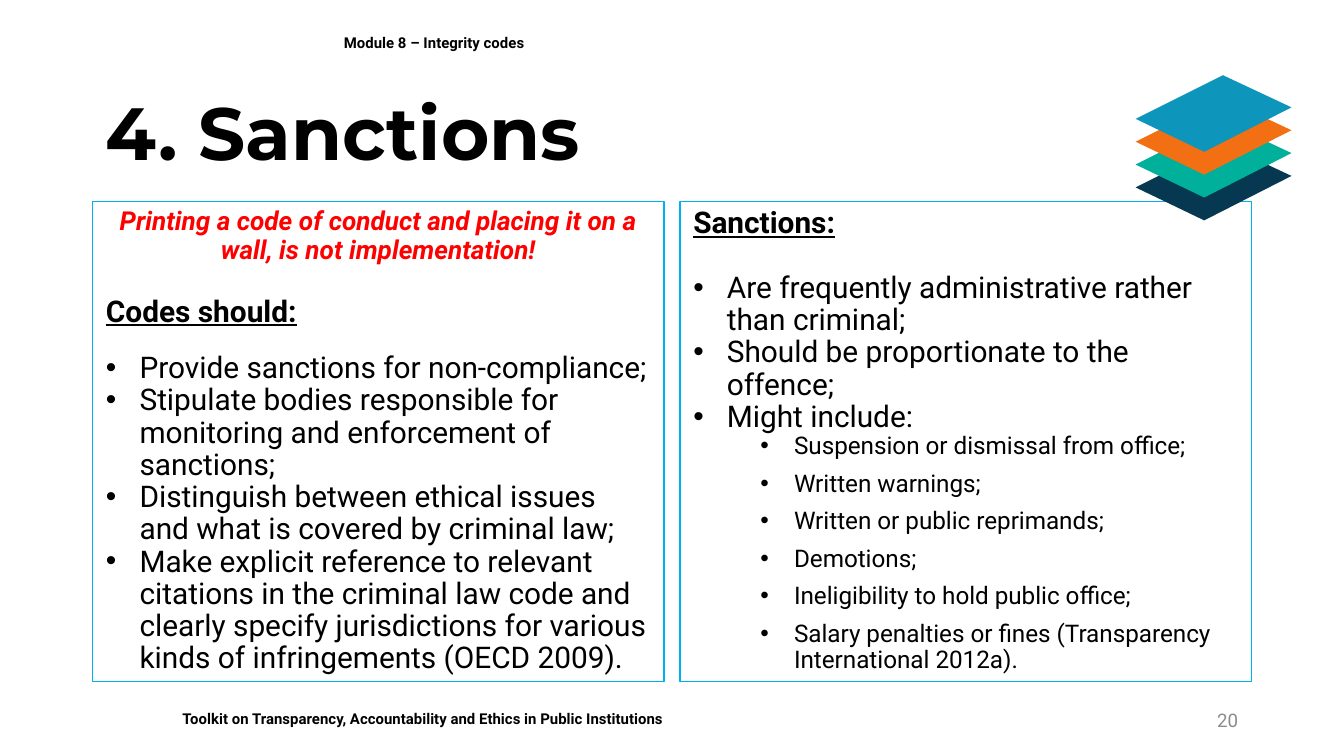
import pptx
import pptx.util
import pptx.dml.color
import pptx.enum.text
import pptx.enum.shapes
import pptx.oxml.ns
from lxml import etree

Inches = pptx.util.Inches
Pt = pptx.util.Pt
ALIGN = pptx.enum.text.PP_ALIGN
ANCHOR = pptx.enum.text.MSO_ANCHOR

CODES = [
    "Provide sanctions for non-compliance;",
    "Stipulate bodies responsible for monitoring and enforcement of sanctions;",
    "Distinguish between ethical issues and what is covered by criminal law;",
    "Make explicit reference to relevant citations in the criminal law code and "
    "clearly specify jurisdictions for various kinds of infringements (OECD 2009).",
]
SANCTIONS = [
    "Are frequently administrative rather than criminal;",
    "Should be proportionate to the offence;",
    "Might include:",
]
PENALTIES = [
    "Suspension or dismissal from office;",
    "Written warnings;",
    "Written or public reprimands;",
    "Demotions;",
    "Ineligibility to hold public office;",
    "Salary penalties or fines (Transparency International 2012a).",
]
LAYERS = ["063951", "00B09B", "F36F13", "0D95BC"]


def color(value):
    return pptx.dml.color.RGBColor.from_string(value)


def add_para(frame, text, size, font="Roboto", fill="000000", bold=False, italic=False,
             underline=False, align=ALIGN.LEFT, spacing=0.9, before=0):
    para = frame.paragraphs[0]
    if para.runs:
        para = frame.add_paragraph()
    para.alignment = align
    para.line_spacing = spacing
    para.space_before = Pt(before)
    span = para.add_run()
    span.text = text
    span.font.name = font
    span.font.size = Pt(size)
    span.font.bold = bold
    span.font.italic = italic
    span.font.underline = underline
    span.font.color.rgb = color(fill)
    return para


def add_bullets(frame, items, size, level=0, first_gap=0, gap=0):
    for index, item in enumerate(items):
        para = add_para(frame, item, size, before=gap if index else first_gap)
        para.level = level
        properties = para._p.get_or_add_pPr()
        properties.set("marL", str(Inches(0.25 + 0.5 * level)))
        properties.set("indent", str(Inches(-0.25)))
        font = etree.SubElement(properties, pptx.oxml.ns.qn("a:buFont"))
        font.set("typeface", "Arial")
        bullet = etree.SubElement(properties, pptx.oxml.ns.qn("a:buChar"))
        bullet.set("char", "•")


def add_text(page, left, top, width, height, text, size, anchor=ANCHOR.MIDDLE, **style):
    box = page.shapes.add_textbox(Inches(left), Inches(top), Inches(width), Inches(height))
    frame = box.text_frame
    frame.word_wrap = True
    frame.vertical_anchor = anchor
    add_para(frame, text, size, **style)


def add_panel(page, left, top, width, height):
    panel = page.shapes.add_shape(pptx.enum.shapes.MSO_SHAPE.RECTANGLE, Inches(left),
                                  Inches(top), Inches(width), Inches(height))
    panel.shadow.inherit = False
    panel.fill.background()
    panel.line.color.rgb = color("00B0F0")
    panel.line.width = Pt(0.75)
    panel.text_frame.word_wrap = True
    panel.text_frame.vertical_anchor = ANCHOR.TOP
    return panel.text_frame


def add_codes(page, *area):
    frame = add_panel(page, *area)
    add_para(frame, "Printing a code of conduct and placing it on a wall, is not implementation!",
             14, fill="FF0000", bold=True, italic=True, align=ALIGN.CENTER)
    add_para(frame, "Codes should:", 16, bold=True, underline=True, before=17)
    add_bullets(frame, CODES, 16, first_gap=13)


def add_sanctions(page, *area):
    frame = add_panel(page, *area)
    add_para(frame, "Sanctions:", 16, bold=True, underline=True)
    add_bullets(frame, SANCTIONS, 16, first_gap=17.3)
    add_bullets(frame, PENALTIES, 13, level=1, gap=6)


def add_layers(page, left, top, width, height, step):
    corners = [(0.56, 0), (1, 0.42), (0.44, 1), (0, 0.57)]
    for index, fill in enumerate(LAYERS):
        layer_top = top + step * (len(LAYERS) - 1 - index)
        points = [(Inches(left + x * width), Inches(layer_top + y * height)) for x, y in corners]
        builder = page.shapes.build_freeform(*points[0])
        builder.add_line_segments(points[1:], close=True)
        layer = builder.convert_to_shape()
        layer.shadow.inherit = False
        layer.fill.solid()
        layer.fill.fore_color.rgb = color(fill)
        layer.line.fill.background()


def main():
    deck = pptx.Presentation()
    deck.slide_width = Inches(10)
    deck.slide_height = deck.slide_width * 9 // 16
    page = deck.slides.add_slide(deck.slide_layouts[6])
    add_text(page, 1.26, 5.23, 7.17, 0.24,
             "Toolkit on Transparency, Accountability and Ethics in Public Institutions",
             8, anchor=ANCHOR.TOP, bold=True, spacing=1)
    add_text(page, 0.69, 0.64, 8.62, 0.75, "4. Sanctions", 39.6, font="Montserrat", bold=True)
    add_codes(page, 0.69, 1.5, 4.25, 3.57)
    add_sanctions(page, 5.06, 1.5, 4.25, 3.57)
    add_text(page, 7.06, 5.21, 2.25, 0.3, "20", 10, fill="8C8C8C", align=ALIGN.RIGHT, spacing=1)
    add_text(page, 2.46, 0.1, 6.85, 0.44, "Module 8 – Integrity codes", 8, bold=True, spacing=1)
    add_layers(page, 8.45, 0.56, 1.16, 0.57, 0.17)
    deck.save("out.pptx")


if __name__ == "__main__":
    main()
